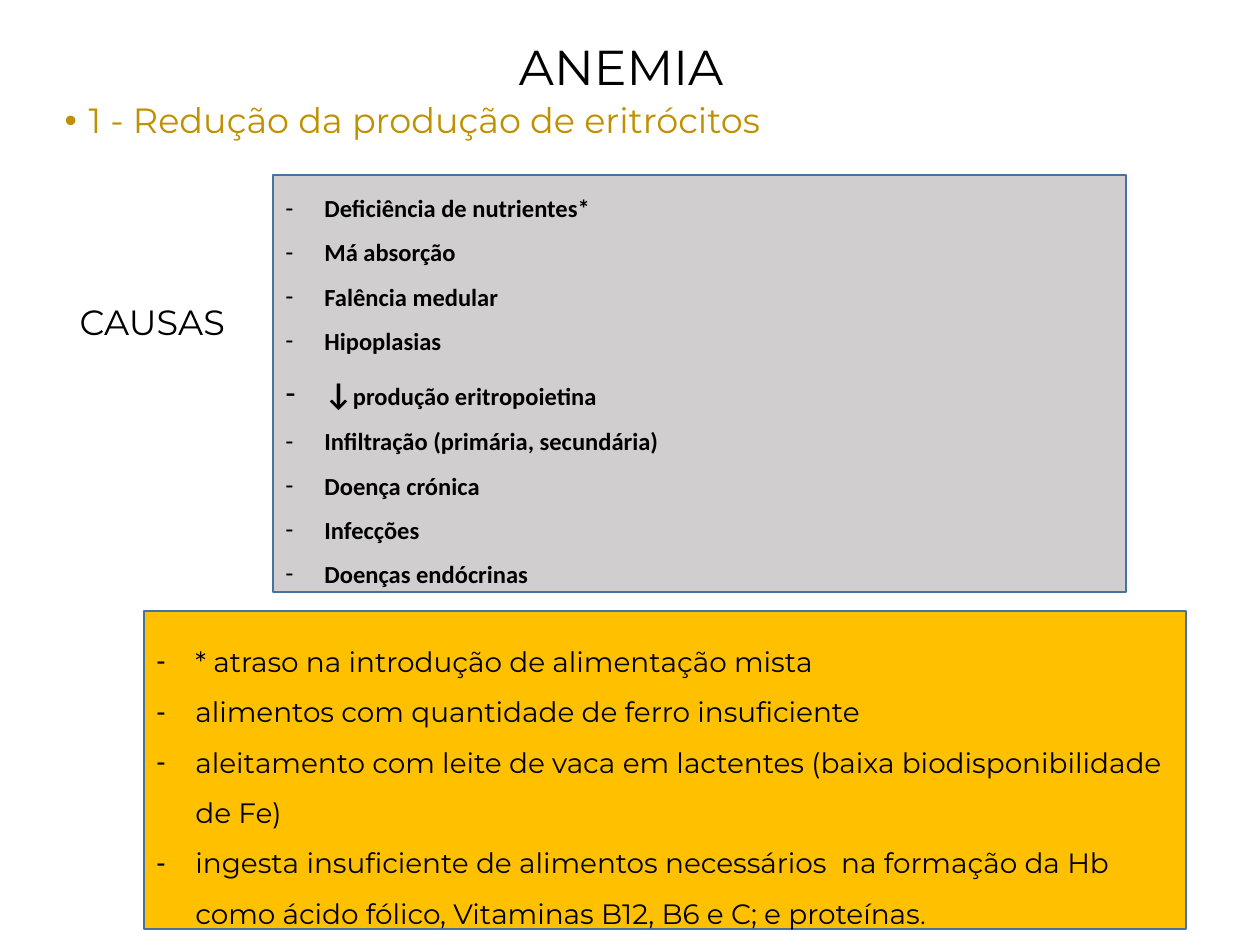
from lxml.etree import SubElement
from pptx import Presentation
from pptx.dml.color import RGBColor
from pptx.enum.shapes import MSO_SHAPE as Shape
from pptx.enum.text import MSO_ANCHOR as Anchor, MSO_AUTO_SIZE as AutoSize, PP_ALIGN as Align
from pptx.oxml.ns import qn
from pptx.util import Emu, Pt

PX_PER_INCH = 126
BLACK = RGBColor(0x00, 0x00, 0x00)
OCHRE = RGBColor(0xBF, 0x90, 0x00)
GREY = RGBColor(0xD0, 0xCE, 0xCE)
AMBER = RGBColor(0xFF, 0xC0, 0x00)
BLUE = RGBColor(0x43, 0x73, 0x9E)

CAUSES = [
    [("Deficiência de nutrientes*", 14)],
    [("Má absorção", 14)],
    [("Falência medular", 14)],
    [("Hipoplasias", 14)],
    [("↓", 18), ("produção eritropoietina", 14)],
    [("Infiltração (primária, secundária)", 14)],
    [("Doença crónica", 14)],
    [("Infecções", 14)],
    [("Doenças endócrinas", 14)],
]
NUTRIENT_NOTES = [
    [("* atraso na introdução de alimentação mista", 16)],
    [("alimentos com quantidade de ferro insuficiente", 16)],
    [("aleitamento com leite de vaca em lactentes (baixa biodisponibilidade de Fe)", 16)],
    [("ingesta insuficiente de alimentos necessários  na formação da Hb "
      "como ácido fólico, Vitaminas B12, B6 e C; e proteínas", 16), (".", 14)],
]


def px(length):
    return Emu(round(length * 914400 / PX_PER_INCH))


class SlideBuilder:
    def __init__(self, slide, font="Montserrat"):
        self.slide = slide
        self.font = font

    def place(self, shape, left, top, width, height):
        shape.left, shape.top = px(left), px(top)
        shape.width, shape.height = px(width), px(height)

    def add_spans(self, para, spans, color=BLACK, font=None, bold=False):
        """Add (text, size) spans as runs."""
        for text, size in spans:
            span = para.add_run()
            span.text = text
            span.font.name = font or self.font
            span.font.size = Pt(size)
            span.font.bold = bold
            span.font.color.rgb = color

    def bullet(self, para, char, margin, indent):
        """Set the hanging indent and bullet; no char means no bullet."""
        properties = para._p.get_or_add_pPr()
        properties.set("marL", str(px(margin)))
        properties.set("indent", str(px(indent)))
        if char:
            SubElement(properties, qn("a:buFont")).set("typeface", "Arial")
            SubElement(properties, qn("a:buChar")).set("char", char)
        else:
            SubElement(properties, qn("a:buNone"))

    def title(self, text, bounds):
        title = self.slide.shapes.title
        self.place(title, *bounds)
        frame = title.text_frame
        frame.auto_size = AutoSize.NONE
        frame.vertical_anchor = Anchor.MIDDLE
        para = frame.paragraphs[0]
        para.alignment = Align.CENTER
        para.line_spacing = 0.9
        self.add_spans(para, [(text, 28)])

    def body(self, heading, label, bounds):
        """Fill the body with a bulleted heading and a label well below it."""
        body = self.slide.placeholders[1]
        self.place(body, *bounds)
        frame = body.text_frame
        frame.auto_size = AutoSize.NONE
        rows = [
            (frame.paragraphs[0], heading, OCHRE, 7.5, ("•", 24, -24)),
            (frame.add_paragraph(), label, BLACK, 94, (None, 15, 0)),
        ]
        for para, text, color, space, marker in rows:
            para.line_spacing = 0.9
            para.space_before = Pt(space)
            self.bullet(para, *marker)
            self.add_spans(para, [(text, 20)], color)

    def list_box(self, items, bounds, fill, font=None, bold=False, top_inset=6):
        box = self.slide.shapes.add_shape(Shape.RECTANGLE, 0, 0, 0, 0)
        self.place(box, *bounds)
        box.shadow.inherit = False
        box.fill.solid()
        box.fill.fore_color.rgb = fill
        box.line.color.rgb = BLUE
        box.line.width = Pt(1)
        frame = box.text_frame
        frame.word_wrap = True
        frame.vertical_anchor = Anchor.MIDDLE
        frame.margin_top = px(top_inset)
        for index, spans in enumerate(items):
            para = frame.add_paragraph() if index else frame.paragraphs[0]
            para.alignment = Align.LEFT
            para.line_spacing = 1.5
            self.bullet(para, "-", 39, -39)
            self.add_spans(para, spans, font=font, bold=bold)


def main():
    deck = Presentation()
    deck.slide_width, deck.slide_height = px(1260), px(945)
    page = SlideBuilder(deck.slides.add_slide(deck.slide_layouts[1]))
    page.title("ANEMIA", (54, 16, 1134, 107))
    page.body("1 - Redução da produção de eritrócitos", "CAUSAS", (52, 97, 1134, 693))
    page.list_box(CAUSES, (273, 175, 853, 417), GREY, font="Calibri", bold=True)
    page.list_box(NUTRIENT_NOTES, (144, 611, 1042, 318), AMBER, top_inset=24)
    deck.save("out.pptx")


if __name__ == "__main__":
    main()
